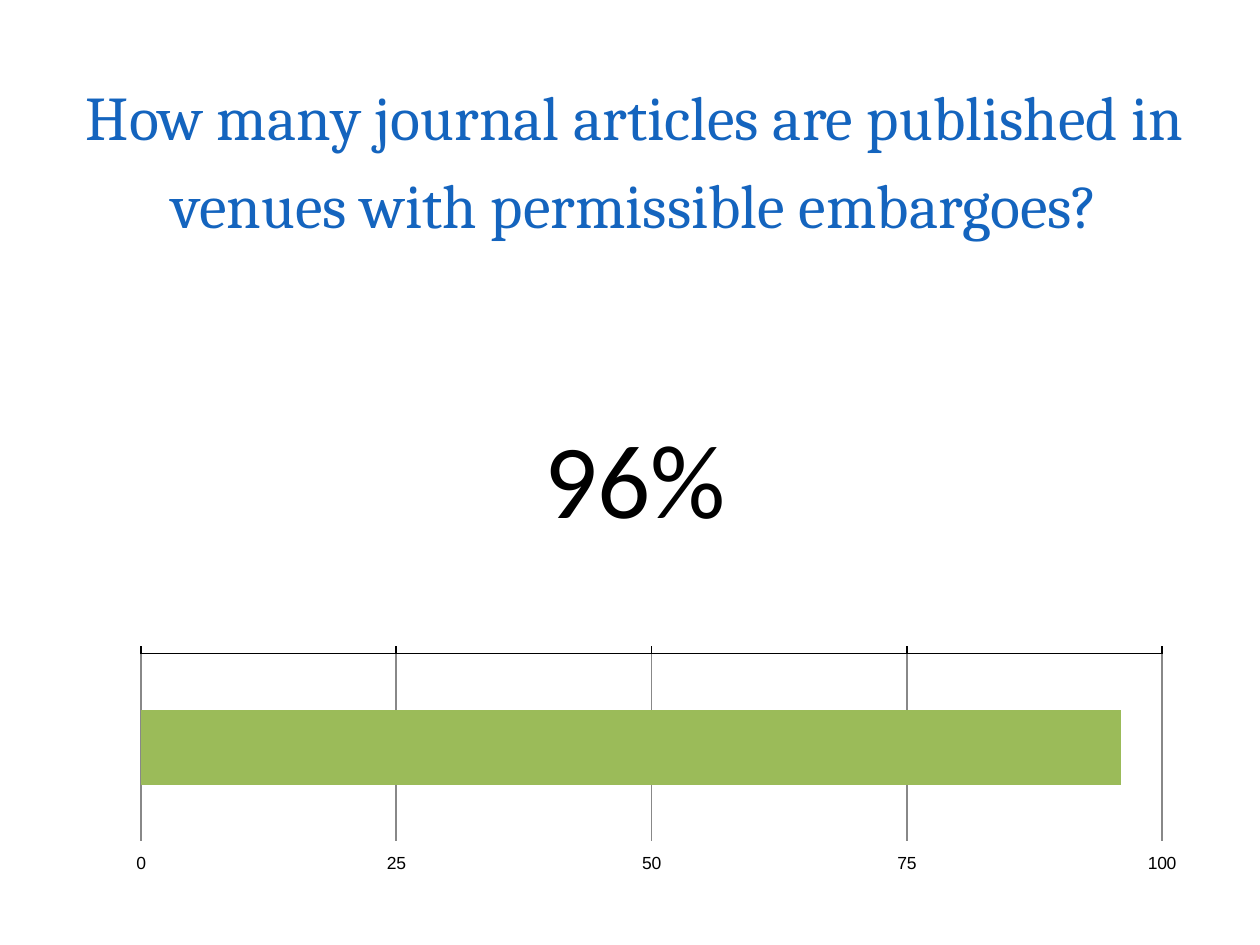
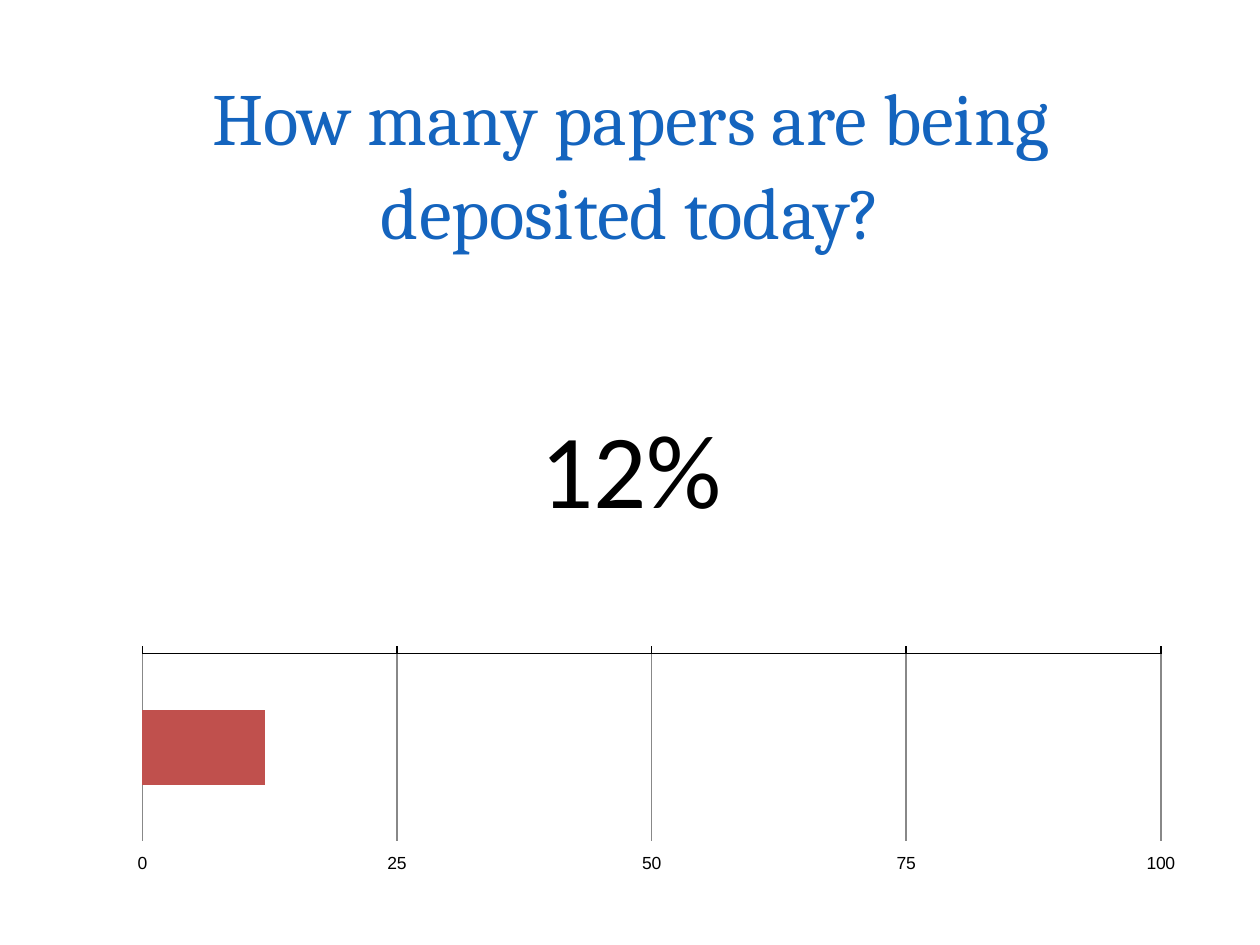
from pptx import Presentation
from pptx.chart.data import CategoryChartData
from pptx.dml.color import RGBColor
from pptx.enum.chart import XL_CHART_TYPE, XL_TICK_LABEL_POSITION, XL_TICK_MARK
from pptx.enum.text import MSO_ANCHOR, MSO_AUTO_SIZE, PP_ALIGN
from pptx.oxml import parse_xml
from pptx.oxml.ns import nsdecls
from pptx.util import Inches, Pt

COLORS = {
    "title": "1464BE",
    "text": "000000",
    "grid": "888888",
    "green": "9BBB59",
    "red": "C0504D",
}
BOX_FORMAT = {
    "word_wrap": True,
    "vertical_anchor": MSO_ANCHOR.TOP,
    "margin_left": 0,
    "margin_top": 0,
    "margin_right": 0,
    "margin_bottom": 0,
}
VALUE_AXIS_FORMAT = {
    "minimum_scale": 0,
    "maximum_scale": 100,
    "major_unit": 25,
    "has_major_gridlines": True,
    "major_tick_mark": XL_TICK_MARK.OUTSIDE,
    "minor_tick_mark": XL_TICK_MARK.NONE,
    "tick_label_position": XL_TICK_LABEL_POSITION.HIGH,
}
CATEGORY_AXIS_FORMAT = {
    "reverse_order": True,
    "has_major_gridlines": False,
    "major_tick_mark": XL_TICK_MARK.NONE,
    "minor_tick_mark": XL_TICK_MARK.NONE,
    "tick_label_position": XL_TICK_LABEL_POSITION.NONE,
}
PLOT_AREA = {"x": 0.018, "y": 0.078, "w": 0.968, "h": 0.784}


def rgb(name):
    """Return the named colour."""
    return RGBColor.from_string(COLORS[name])


def apply_format(target, values):
    """Set each attribute of the target from a dict."""
    for name, value in values.items():
        setattr(target, name, value)


def add_text(page, text, frame, font, color, paragraph_format, auto_size=MSO_AUTO_SIZE.NONE):
    """Add a centred one-paragraph text box."""
    box = page.shapes.add_textbox(*map(Inches, frame)).text_frame
    apply_format(box, {**BOX_FORMAT, "auto_size": auto_size})
    para = box.paragraphs[0]
    apply_format(para, {"alignment": PP_ALIGN.CENTER, **paragraph_format})
    span = para.add_run()
    span.text = text
    apply_format(span.font, font)
    span.font.color.rgb = rgb(color)


def add_title(page, text, left, width, size, spacing):
    """Add the question at the top of the page."""
    add_text(page, text, (left, 0.52, width, 2.06), {"name": "Cambria", "size": Pt(size)},
             "title", {"line_spacing": Pt(spacing)})


def add_percentage(page, value, left, top):
    """Add the large percentage above the bar."""
    add_text(page, f"{value}%", (left, top, 8.66, 0.96), {"name": "Calibri", "size": Pt(60)},
             "text", {"space_before": Pt(24)}, MSO_AUTO_SIZE.SHAPE_TO_FIT_TEXT)


def style_line(line, color):
    """Give a line its colour and a width of one point."""
    line.color.rgb = rgb(color)
    line.width = Pt(1)


def fix_plot_area(chart):
    """Pin the inner plot area to fractions of the chart frame."""
    area = chart.plots[0]._element.getparent()
    for layout in area.findall("{*}layout"):
        area.remove(layout)
    modes = "".join(f'<c:{side}Mode val="edge"/>' for side in "xy")
    sizes = "".join(f'<c:{side} val="{value}"/>' for side, value in PLOT_AREA.items())
    area.insert(0, parse_xml(
        f'<c:layout {nsdecls("c")}><c:manualLayout><c:layoutTarget val="inner"/>'
        f"{modes}{sizes}</c:manualLayout></c:layout>"))


def add_percentage_bar(page, value, kind, left, width, color, series_name):
    """Add a single horizontal bar on a scale of 0 to 100."""
    data = CategoryChartData(number_format="0")
    data.categories = ["1"]
    data.add_series(series_name, [value])
    frame = [Inches(length) for length in (left, 5.04, width, 1.9)]
    chart = page.shapes.add_chart(kind, *frame, data).chart
    apply_format(chart, {"has_title": False, "has_legend": False})
    apply_format(chart.font, {"name": "Arial", "size": Pt(10)})
    chart.font.color.rgb = rgb("text")
    apply_format(chart.plots[0], {"gap_width": 150, "vary_by_categories": False})
    fill = chart.plots[0].series[0].format.fill
    fill.solid()
    fill.fore_color.rgb = rgb(color)
    apply_format(chart.value_axis, VALUE_AXIS_FORMAT)
    apply_format(chart.value_axis.tick_labels, {"number_format": "0", "number_format_is_linked": False})
    style_line(chart.value_axis.format.line, "text")
    style_line(chart.value_axis.major_gridlines.format.line, "grid")
    apply_format(chart.category_axis, CATEGORY_AXIS_FORMAT)
    chart.category_axis.format.line.fill.background()
    fix_plot_area(chart)


def main():
    """Build the two question slides."""
    deck = Presentation()
    apply_format(deck, {"slide_width": Inches(10), "slide_height": Inches(7.5)})
    embargo_page, deposit_page = (deck.slides.add_slide(deck.slide_layouts[6]) for _ in range(2))

    add_title(embargo_page, "How many journal articles are published in venues with permissible embargoes?",
              0.59, 8.9, 35.5, 50)
    add_percentage(embargo_page, 96, 0.71, 3.28)
    add_percentage_bar(embargo_page, 96, XL_CHART_TYPE.BAR_STACKED, 0.97, 8.37, "green", "Series 1")

    add_title(deposit_page, "How many papers are being deposited today?", 0.98, 8.05, 42, 54)
    add_percentage(deposit_page, 12, 0.68, 3.2)
    add_percentage_bar(deposit_page, 12, XL_CHART_TYPE.BAR_CLUSTERED, 0.98, 8.35, "red", "n")

    deck.save("out.pptx")


if __name__ == "__main__":
    main()
